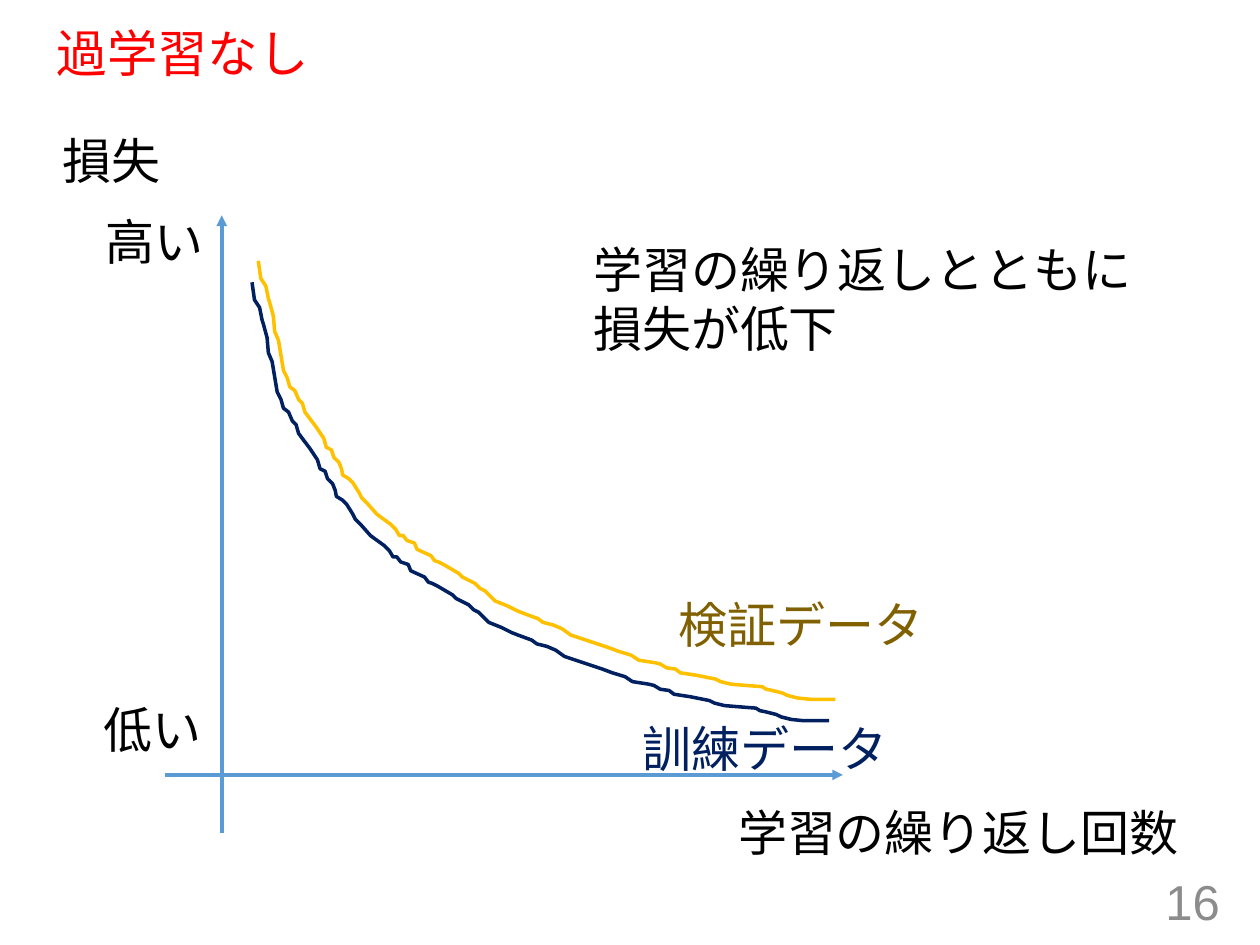
import pptx
import pptx.dml.color
import pptx.enum.shapes
import pptx.enum.text
import pptx.oxml
import pptx.oxml.ns
import pptx.util
from pptx.util import Inches

RGBColor = pptx.dml.color.RGBColor
ALIGN = pptx.enum.text.PP_ALIGN
ANCHOR = pptx.enum.text.MSO_ANCHOR
AUTO_SIZE = pptx.enum.text.MSO_AUTO_SIZE

RED = RGBColor(0xFF, 0x00, 0x00)
BLACK = RGBColor(0x00, 0x00, 0x00)
GREY = RGBColor(0x8C, 0x8C, 0x8C)
BLUE = RGBColor(0x5B, 0x9B, 0xD5)
NAVY = RGBColor(0x00, 0x20, 0x60)
GOLD = RGBColor(0xFF, 0xC0, 0x00)
BROWN = RGBColor(0x80, 0x60, 0x00)

LOSS_CURVE = [
    (0, 0), (0.02, 0.14), (0.06, 0.2), (0.08, 0.3), (0.09, 0.33), (0.12, 0.44),
    (0.13, 0.56), (0.16, 0.63), (0.2, 0.87), (0.23, 0.93), (0.25, 1), (0.29, 1.03),
    (0.32, 1.1), (0.35, 1.13), (0.37, 1.2), (0.4, 1.24), (0.46, 1.32), (0.52, 1.41),
    (0.54, 1.48), (0.58, 1.5), (0.6, 1.56), (0.64, 1.6), (0.66, 1.65), (0.67, 1.7),
    (0.72, 1.73), (0.75, 1.76), (0.8, 1.84), (0.82, 1.88), (0.86, 1.92), (0.94, 2.01),
    (0.98, 2.04), (1.05, 2.09), (1.09, 2.13), (1.12, 2.18), (1.15, 2.18), (1.18, 2.22),
    (1.24, 2.24), (1.26, 2.29), (1.37, 2.34), (1.4, 2.38), (1.43, 2.39), (1.47, 2.41),
    (1.59, 2.48), (1.62, 2.51), (1.72, 2.56), (1.76, 2.6), (1.8, 2.62), (1.83, 2.65),
    (1.88, 2.7), (1.98, 2.74), (2.06, 2.78), (2.11, 2.8), (2.22, 2.84), (2.26, 2.87),
    (2.34, 2.89), (2.41, 2.92), (2.48, 2.97), (2.63, 3.02), (2.69, 3.04), (2.78, 3.07),
    (2.86, 3.1), (2.96, 3.13), (3.02, 3.17), (3.15, 3.19), (3.19, 3.2), (3.24, 3.23),
    (3.31, 3.24), (3.35, 3.27), (3.48, 3.29), (3.63, 3.32), (3.67, 3.34), (3.75, 3.36),
    (3.87, 3.37), (4, 3.38), (4.03, 3.4), (4.08, 3.41), (4.16, 3.43), (4.2, 3.45),
    (4.28, 3.47), (4.38, 3.48), (4.58, 3.48),
]


def write_text(tf, text, size=28, font="Calibri", color=BLACK, align=ALIGN.LEFT,
               anchor=ANCHOR.TOP, wrap=False, auto_size=AUTO_SIZE.SHAPE_TO_FIT_TEXT,
               spacing=None):
    tf.word_wrap = wrap
    tf.auto_size = auto_size
    tf.vertical_anchor = anchor
    for i, line in enumerate(text.split("\n")):
        p = tf.add_paragraph() if i else tf.paragraphs[0]
        p.alignment = align
        p.line_spacing = spacing
        r = p.add_run()
        r.text = line
        r.font.size = pptx.util.Pt(size)
        r.font.name = font
        r.font.color.rgb = color


def add_label(s, left, top, width, height, text, **style):
    sp = s.shapes.add_textbox(Inches(left), Inches(top), Inches(width), Inches(height))
    write_text(sp.text_frame, text, **style)


def add_title(s, left, top, width, height):
    sp = s.shapes.title
    sp.left, sp.top = Inches(left), Inches(top)
    sp.width, sp.height = Inches(width), Inches(height)
    write_text(sp.text_frame, "過学習なし", size=28.8, font="Arial", color=RED,
               anchor=ANCHOR.MIDDLE, wrap=True, auto_size=AUTO_SIZE.NONE, spacing=0.9)


def add_page_number(s, left, top, width, height):
    add_label(s, left, top, width, height, "16", font="Arial", color=GREY,
              align=ALIGN.RIGHT, anchor=ANCHOR.MIDDLE, wrap=True,
              auto_size=AUTO_SIZE.NONE)


def add_axis(s, x1, y1, x2, y2):
    axis = s.shapes.add_connector(pptx.enum.shapes.MSO_CONNECTOR.STRAIGHT,
                                  Inches(x1), Inches(y1), Inches(x2), Inches(y2))
    axis.line.color.rgb = BLUE
    axis.line.width = pptx.util.Pt(2)
    nsdecls = pptx.oxml.ns.nsdecls("a")
    axis.line._get_or_add_ln().append(
        pptx.oxml.parse_xml(f'<a:tailEnd {nsdecls} type="triangle"/>'))
    axis._element.spPr.append(pptx.oxml.parse_xml(f"<a:effectLst {nsdecls}/>"))


def add_curve(s, left, top, color):
    points = [(Inches(left + x), Inches(top + y)) for x, y in LOSS_CURVE]
    builder = s.shapes.build_freeform(*points[0])
    builder.add_line_segments(points[1:], close=False)
    sp = builder.convert_to_shape()
    sp.shadow.inherit = False
    sp.fill.background()
    sp.line.color.rgb = color
    sp.line.width = pptx.util.Pt(2)


def add_loss_graph(s, left, top, width, height):
    origin_x, origin_y = left + 0.45, top + 4.44
    add_axis(s, origin_x, top + height, origin_x, top)
    add_axis(s, left, origin_y, left + width, origin_y)
    add_curve(s, left + 0.69, top + 0.53, NAVY)
    add_curve(s, left + 0.74, top + 0.36, GOLD)
    labels = [
        ("損失", -0.91, -0.72, 0.99, 0.57, BLACK),
        ("高い", -0.57, -0.08, 0.99, 0.57, BLACK),
        ("低い", -0.59, 3.79, 0.99, 0.57, BLACK),
        ("学習の繰り返し回数", 4.45, 4.61, 3.74, 0.57, BLACK),
        ("訓練データ", 3.69, 3.94, 2.17, 0.57, NAVY),
        ("検証データ", 3.98, 2.96, 2.17, 0.57, BROWN),
        ("学習の繰り返しとともに\n損失が低下", 3.3, 0.14, 4.52, 1.04, BLACK),
    ]
    for text, dx, dy, w, h, color in labels:
        add_label(s, left + dx, top + dy, w, h, text, color=color)


def main():
    prs = pptx.Presentation()
    prs.slide_width, prs.slide_height = Inches(10), Inches(7.5)
    s = prs.slides.add_slide(prs.slide_layouts.get_by_name("Title Only"))
    add_title(s, 0.35, 0.19, 9.25, 0.51)
    add_page_number(s, 7.53, 6.95, 2.25, 0.4)
    add_loss_graph(s, 1.31, 1.71, 5.38, 4.9)
    prs.save("out.pptx")


if __name__ == "__main__":
    main()
